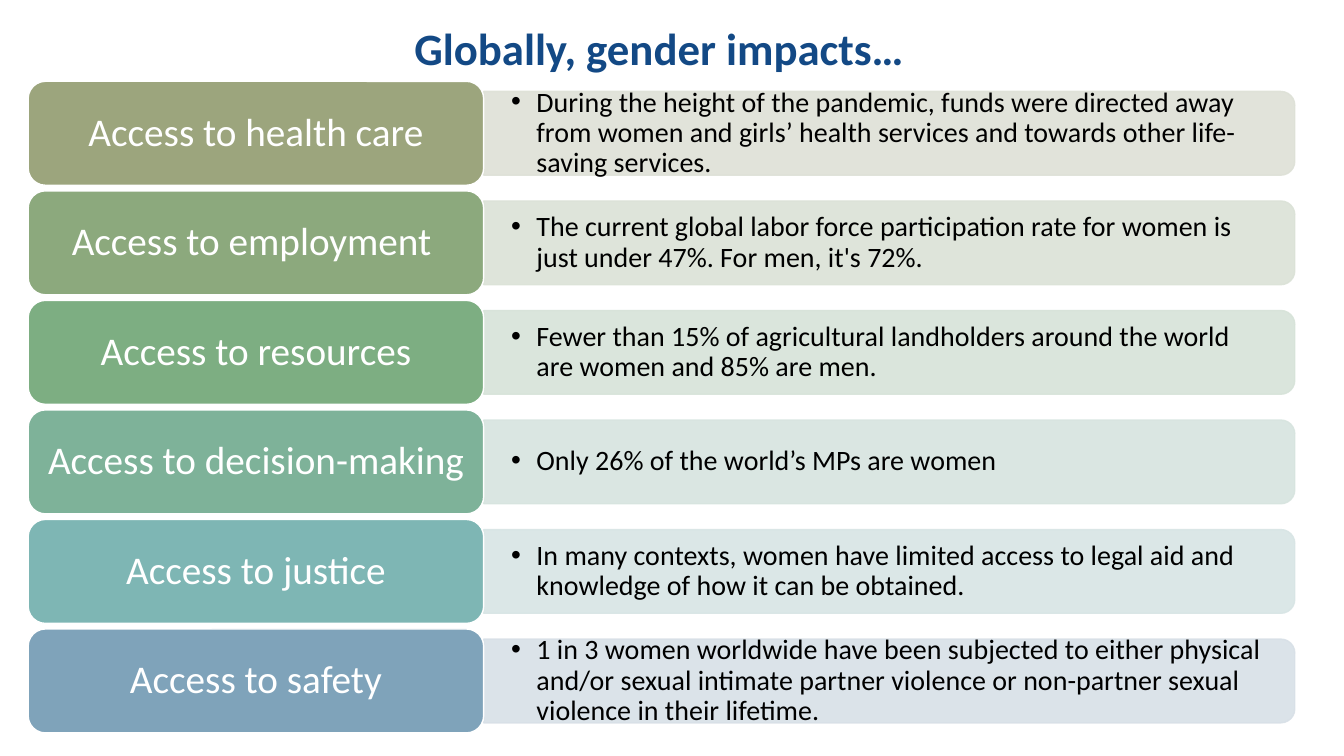
from lxml import etree
from pptx import Presentation
from pptx.dml.color import RGBColor
from pptx.enum.shapes import MSO_SHAPE
from pptx.enum.text import MSO_ANCHOR, MSO_AUTO_SIZE, PP_ALIGN
from pptx.oxml.ns import qn
from pptx.util import Cm, Pt

ROUNDED = MSO_SHAPE.ROUNDED_RECTANGLE
ROUNDED_END = MSO_SHAPE.ROUND_2_SAME_RECTANGLE
TOP, MIDDLE = MSO_ANCHOR.TOP, MSO_ANCHOR.MIDDLE
LEFT, CENTER = PP_ALIGN.LEFT, PP_ALIGN.CENTER
NO_AUTOFIT = MSO_AUTO_SIZE.NONE

FONT = "Calibri"
COLORS = {"title": "134985", "white": "FFFFFF", "black": "000000"}
TITLE = "Globally, gender impacts…"
ROWS = [
    ("Access to health care", "9CA57D", "DEE1D7",
     "During the height of the pandemic, funds were directed away from women and "
     "girls’ health services and towards other life-saving services."),
    ("Access to employment ", "8CA97D", "DBE2D7",
     "The current global labor force participation rate for women is just under 47%. "
     "For men, it's 72%."),
    ("Access to resources", "7DAE82", "D7E3D9",
     "Fewer than 15% of agricultural landholders around the world are women and "
     "85% are men."),
    ("Access to decision-making", "7EB299", "D7E4DF",
     "Only 26% of the world’s MPs are women"),
    ("Access to justice", "7EB6B4", "D8E5E5",
     "In many contexts, women have limited access to legal aid and knowledge of how "
     "it can be obtained."),
    ("Access to safety", "7FA3BA", "D8E0E7",
     "1 in 3 women worldwide have been subjected to either physical and/or sexual "
     "intimate partner violence or non-partner sexual violence in their lifetime."),
]
LIST_LEFT, LIST_TOP, LIST_WIDTH = 0.71, 2.05, 31.92
ROW_HEIGHT, ROW_PITCH = 2.62, 2.76
LABEL_WIDTH, PANEL_HEIGHT = 11.48, 2.11


def write_text(shape, text, size, color, align, anchor, inset_x, inset_y):
    """Fill a shape with one formatted paragraph and return the paragraph."""
    frame = shape.text_frame
    frame.text = text
    frame.word_wrap = True
    frame.vertical_anchor = anchor
    frame.margin_left = frame.margin_right = Cm(inset_x)
    frame.margin_top = frame.margin_bottom = Cm(inset_y)
    paragraph = frame.paragraphs[0]
    paragraph.alignment = align
    font = paragraph.runs[0].font
    font.name, font.size = FONT, Pt(size)
    font.color.rgb = RGBColor.from_string(color)
    return paragraph


def paint(shape, fill, line):
    """Give a shape a flat fill and a thin outline."""
    shape.shadow.inherit = False
    shape.fill.solid()
    shape.fill.fore_color.rgb = RGBColor.from_string(fill)
    shape.line.color.rgb = RGBColor.from_string(line)
    shape.line.width = Pt(1)


def add_title(slide, left, top, width, height):
    """Place and format the slide title."""
    title = slide.shapes.title
    title.left, title.top, title.width, title.height = map(Cm, (left, top, width, height))
    paragraph = write_text(title, TITLE, 32, COLORS["title"], LEFT, TOP, 0.25, 0.13)
    paragraph.runs[0].font.bold = True
    title.text_frame.word_wrap = False
    title.text_frame.auto_size = NO_AUTOFIT


def add_panel(slide, left, top, width, height, color, text):
    """Draw a pale panel rounded on the right, with one bulleted statement."""
    panel = slide.shapes.add_shape(
        ROUNDED_END, Cm(left + (width - height) / 2), Cm(top + (height - width) / 2),
        Cm(height), Cm(width))
    panel.rotation = 90
    paint(panel, color, color)
    for solid in panel._element.spPr.iter(qn("a:solidFill")):
        etree.SubElement(solid[0], qn("a:alpha"), val="90000")

    statement = slide.shapes.add_textbox(Cm(left), Cm(top + 0.1), Cm(width - 0.1), Cm(height - 0.2))
    paragraph = write_text(statement, text, 20, COLORS["black"], LEFT, MIDDLE, 0.69, 0.36)
    paragraph.line_spacing = 0.9
    properties = paragraph._p.get_or_add_pPr()
    properties.set("marL", str(Cm(0.64)))
    properties.set("indent", str(-Cm(0.64)))
    etree.SubElement(properties, qn("a:buFont"), typeface="Arial")
    etree.SubElement(properties, qn("a:buChar"), char="•")


def add_label(slide, left, top, width, height, color, text):
    """Draw a rounded label with centred white text."""
    label = slide.shapes.add_shape(ROUNDED, Cm(left), Cm(top), Cm(width), Cm(height))
    paint(label, color, COLORS["white"])
    paragraph = write_text(label, text, 28, COLORS["white"], CENTER, MIDDLE, 0.3, 0.15)
    paragraph.line_spacing = 0.9


def add_impact_list(slide, left, top, width):
    """Stack one label and panel per row at an equal pitch."""
    for index, (label, label_color, panel_color, statement) in enumerate(ROWS):
        row_top = top + index * ROW_PITCH
        panel_top = row_top + (ROW_HEIGHT - PANEL_HEIGHT) / 2
        add_panel(slide, left + LABEL_WIDTH, panel_top, width - LABEL_WIDTH,
                  PANEL_HEIGHT, panel_color, statement)
        add_label(slide, left, row_top, LABEL_WIDTH, ROW_HEIGHT, label_color, label)


def main():
    """Build and save the presentation."""
    presentation = Presentation()
    presentation.slide_width, presentation.slide_height = Cm(33.87), Cm(19.05)
    slide = presentation.slides.add_slide(presentation.slide_layouts[5])
    add_title(slide, 10.19, 0.38, 12.95, 2.39)
    add_impact_list(slide, LIST_LEFT, LIST_TOP, LIST_WIDTH)
    presentation.save("out.pptx")


if __name__ == "__main__":
    main()
